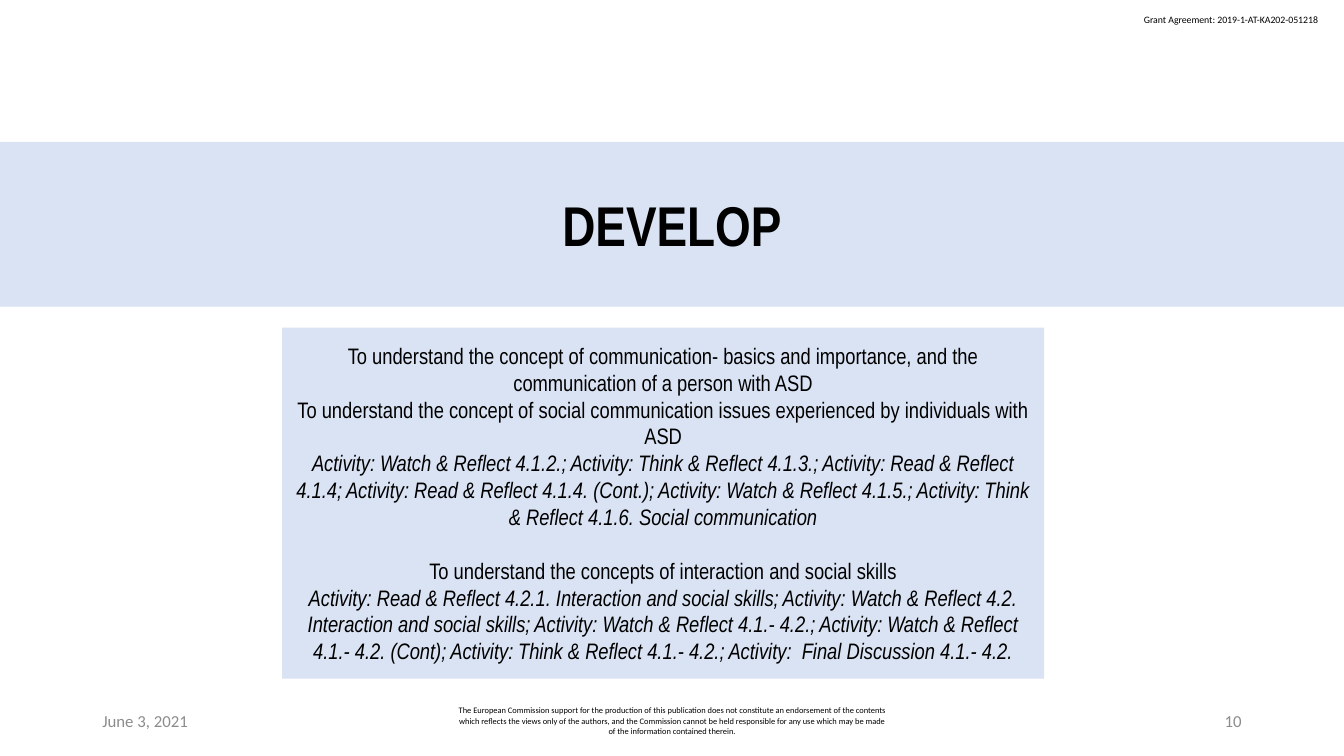
from pptx import Presentation
from pptx.dml.color import RGBColor
from pptx.enum.shapes import MSO_SHAPE
from pptx.enum.text import MSO_ANCHOR, PP_ALIGN
from pptx.util import Inches, Pt

presentation = Presentation()
presentation.slide_width = Inches(13.33)
presentation.slide_height = Inches(7.5)
slide = presentation.slides.add_slide(presentation.slide_layouts[6])

# Grid of 160 columns by 90 rows
COLUMN = presentation.slide_width / 160
ROW = presentation.slide_height / 90
BLACK, GREY, PALE_BLUE = "000000", "8C8C8C", "DAE3F3"


def color(hex_string):
    return RGBColor.from_string(hex_string)


def write(paragraph, text, alignment, font_color, font_format):
    paragraph.text = text
    paragraph.alignment = alignment
    paragraph.font.color.rgb = color(font_color)
    for name, value in font_format.items():
        setattr(paragraph.font, name, value)


# Header and footer: text, column, row, columns, rows, size, colour, alignment, anchor, wrap
DISCLAIMER = (
    "The European Commission support for the production of this publication does not "
    "constitute an endorsement of the contents which reflects the views only of the authors, "
    "and the Commission cannot be held responsible for any use which may be made of the "
    "information contained therein."
)
margin_texts = [
    ("Grant Agreement: 2019-1-AT-KA202-051218", 135, 1, 23.6, 2.6, 7, BLACK,
     PP_ALIGN.LEFT, MSO_ANCHOR.TOP, False),
    ("June 3, 2021", 11, 83.4, 36, 4.8, 12, GREY, PP_ALIGN.LEFT, MSO_ANCHOR.MIDDLE, True),
    (DISCLAIMER, 53, 83.4, 54, 4.8, 6, BLACK, PP_ALIGN.CENTER, MSO_ANCHOR.MIDDLE, True),
    ("10", 113, 83.4, 36, 4.8, 12, GREY, PP_ALIGN.RIGHT, MSO_ANCHOR.MIDDLE, True),
]
for text, column, row, columns, rows, size, font_color, alignment, anchor, wrap in margin_texts:
    box = slide.shapes.add_textbox(
        int(column * COLUMN), int(row * ROW), int(columns * COLUMN), int(rows * ROW))
    box.text_frame.word_wrap = wrap
    box.text_frame.vertical_anchor = anchor
    write(box.text_frame.paragraphs[0], text, alignment, font_color,
          {"name": "Calibri", "size": Pt(size)})

# Panels: title band and objectives, each paragraph as text, italic, space before
title = [("DEVELOP", False, 0)]
objectives = [
    ("To understand the concept of communication- basics and importance, and the "
     "communication of a person with ASD", False, 0),
    ("To understand the concept of social communication issues experienced by "
     "individuals with ASD", False, 0),
    ("Activity: Watch & Reflect 4.1.2.; Activity: Think & Reflect 4.1.3.; "
     "Activity: Read & Reflect 4.1.4; Activity: Read & Reflect 4.1.4. (Cont.); "
     "Activity: Watch & Reflect 4.1.5.; Activity: Think & Reflect 4.1.6. "
     "Social communication", True, 0),
    ("To understand the concepts of interaction and social skills", False, 19.2),
    ("Activity: Read & Reflect 4.2.1. Interaction and social skills; "
     "Activity: Watch & Reflect 4.2. Interaction and social skills; "
     "Activity: Watch & Reflect 4.1.- 4.2.; Activity: Watch & Reflect 4.1.- 4.2. (Cont); "
     "Activity: Think & Reflect 4.1.- 4.2.; Activity:  Final Discussion 4.1.- 4.2.", True, 0),
]
panels = [
    (0, 16.9, 160, 19.6, 40, True, title),
    (33.6, 39, 90.7, 41.8, 16, False, objectives),
]
panel_format = {
    "margin_left": Inches(0.13), "margin_right": Inches(0.13),
    "margin_top": Inches(0.07), "margin_bottom": Inches(0.07),
    "vertical_anchor": MSO_ANCHOR.MIDDLE, "word_wrap": True,
}
for column, row, columns, rows, size, bold, lines in panels:
    panel = slide.shapes.add_shape(
        MSO_SHAPE.RECTANGLE,
        int(column * COLUMN), int(row * ROW), int(columns * COLUMN), int(rows * ROW))
    panel.shadow.inherit = False
    panel.fill.solid()
    panel.fill.fore_color.rgb = color(PALE_BLUE)
    panel.line.fill.background()
    frame = panel.text_frame
    for name, value in panel_format.items():
        setattr(frame, name, value)
    for index, (text, italic, space_before) in enumerate(lines):
        paragraph = frame.add_paragraph() if index else frame.paragraphs[0]
        paragraph.space_before = Pt(space_before)
        write(paragraph, text, PP_ALIGN.CENTER, BLACK,
              {"name": "Arial Narrow", "size": Pt(size), "bold": bold, "italic": italic})

presentation.save("out.pptx")
